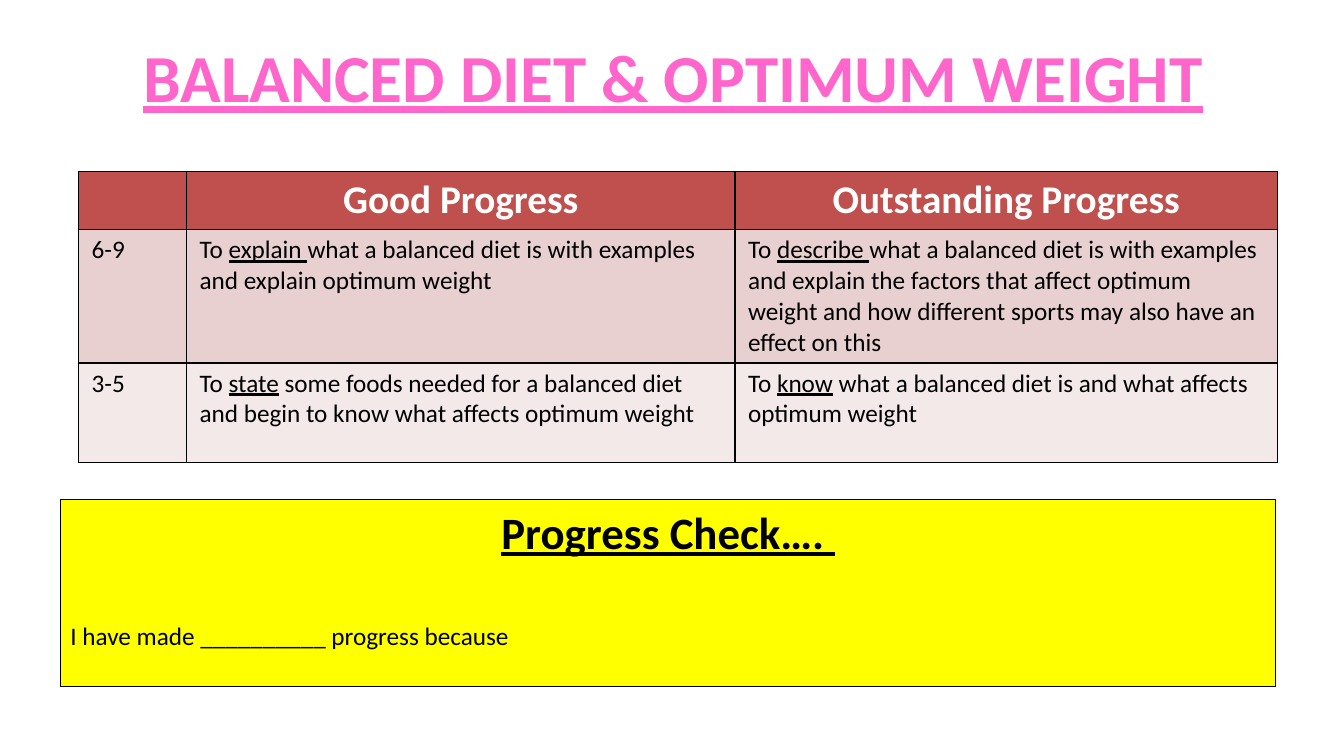
from lxml.etree import SubElement
from pptx import Presentation
from pptx.dml.color import RGBColor
from pptx.enum.shapes import MSO_SHAPE as Shape
from pptx.enum.text import MSO_ANCHOR as Anchor, PP_ALIGN as Align
from pptx.oxml.ns import qn
from pptx.util import Inches, Pt

COLOURS = {
    "title": "FF66CC",
    "header": "C0504D",
    "upper": "E8D0D0",
    "lower": "F4E9E9",
    "check": "FFFF00",
    "ink": "000000",
    "white": "FFFFFF",
}
TITLE = {"size": Pt(48), "bold": True, "underline": True}
HEADING = {"size": Pt(28), "bold": True}
BODY = {"size": Pt(18), "bold": False}
CHECK = {"size": Pt(32), "bold": True, "underline": True}

COLUMN_WIDTHS = [1.07, 5.44, 5.38]
ROWS = [
    ("header", 0.58, ["", "Good Progress", "Outstanding Progress"]),
    ("upper", 1.32, [
        "6-9",
        ("To ", "explain ", "what a balanced diet is with examples and explain optimum weight"),
        ("To ", "describe ", "what a balanced diet is with examples and explain the factors "
         "that affect optimum weight and how different sports may also have an effect on this"),
    ]),
    ("lower", 0.99, [
        "3-5",
        ("To ", "state", " some foods needed for a balanced diet and begin to know "
         "what affects optimum weight"),
        ("To ", "know", " what a balanced diet is and what affects optimum weight"),
    ]),
]


def colour(name):
    return RGBColor.from_string(COLOURS[name])


def set_values(target, values):
    for name, value in values.items():
        setattr(target, name, value)


def add_span(para, text, style, ink="ink", **extra):
    span = para.add_run()
    span.text = text
    set_values(span.font, {"name": "Calibri", **style, **extra})
    span.font.color.rgb = colour(ink)


def place(shape, box):
    names = ("left", "top", "width", "height")
    set_values(shape, dict(zip(names, map(Inches, box))))


def add_title(page, box):
    title = page.shapes.title
    place(title, box)
    title.text_frame.vertical_anchor = Anchor.MIDDLE
    para = title.text_frame.paragraphs[0]
    para.alignment = Align.CENTER
    add_span(para, "BALANCED DIET & OPTIMUM WEIGHT", TITLE, "title")


def border_cell(cell):
    properties = cell._tc.get_or_add_tcPr()
    for index, side in enumerate(("lnL", "lnR", "lnT", "lnB")):
        line = properties.makeelement(qn(f"a:{side}"), {"w": str(Pt(1))})
        properties.insert(index, line)
        fill = SubElement(line, qn("a:solidFill"))
        SubElement(fill, qn("a:srgbClr"), val=COLOURS["ink"])


def fill_cell(cell, content, kind):
    set_values(cell, {
        "margin_left": Inches(0.13), "margin_right": Inches(0.13),
        "margin_top": Inches(0.05), "margin_bottom": Inches(0.05),
    })
    cell.fill.solid()
    cell.fill.fore_color.rgb = colour(kind)
    border_cell(cell)
    para = cell.text_frame.paragraphs[0]
    if kind == "header":
        para.alignment = Align.CENTER
        if content:
            add_span(para, content, HEADING, "white")
    elif isinstance(content, str):
        add_span(para, content, BODY)
    else:
        for index, text in enumerate(content):
            add_span(para, text, BODY, underline=index == 1)


def add_progress_table(page, box):
    frame = page.shapes.add_table(len(ROWS), len(COLUMN_WIDTHS), *map(Inches, box))
    table = frame.table
    for column, width in zip(table.columns, COLUMN_WIDTHS):
        column.width = Inches(width)
    for row, (kind, height, contents) in zip(table.rows, ROWS):
        row.height = Inches(height)
        for cell, content in zip(row.cells, contents):
            fill_cell(cell, content, kind)


def add_progress_check(page, box):
    panel = page.shapes.add_shape(Shape.RECTANGLE, *map(Inches, box))
    panel.shadow.inherit = False
    panel.fill.solid()
    panel.fill.fore_color.rgb = colour("check")
    panel.line.color.rgb = colour("ink")
    panel.line.width = Pt(0.75)
    frame = panel.text_frame
    set_values(frame, {"word_wrap": True, "vertical_anchor": Anchor.TOP})
    heading = frame.paragraphs[0]
    heading.alignment = Align.CENTER
    add_span(heading, "Progress Check…. ", CHECK)
    answer = frame.add_paragraph()
    set_values(answer, {"alignment": Align.LEFT, "space_before": Pt(44)})
    add_span(answer, "I have made __________ progress because", BODY)


def main():
    deck = Presentation()
    set_values(deck, {"slide_width": Inches(13.33), "slide_height": Inches(7.5)})
    page = deck.slides.add_slide(deck.slide_layouts.get_by_name("Title Only"))
    add_title(page, (0.68, 0.13, 12, 1.25))
    add_progress_table(page, (0.78, 1.7, 11.89, 2.89))
    add_progress_check(page, (0.6, 4.96, 12.05, 1.85))
    deck.save("out.pptx")


if __name__ == "__main__":
    main()
